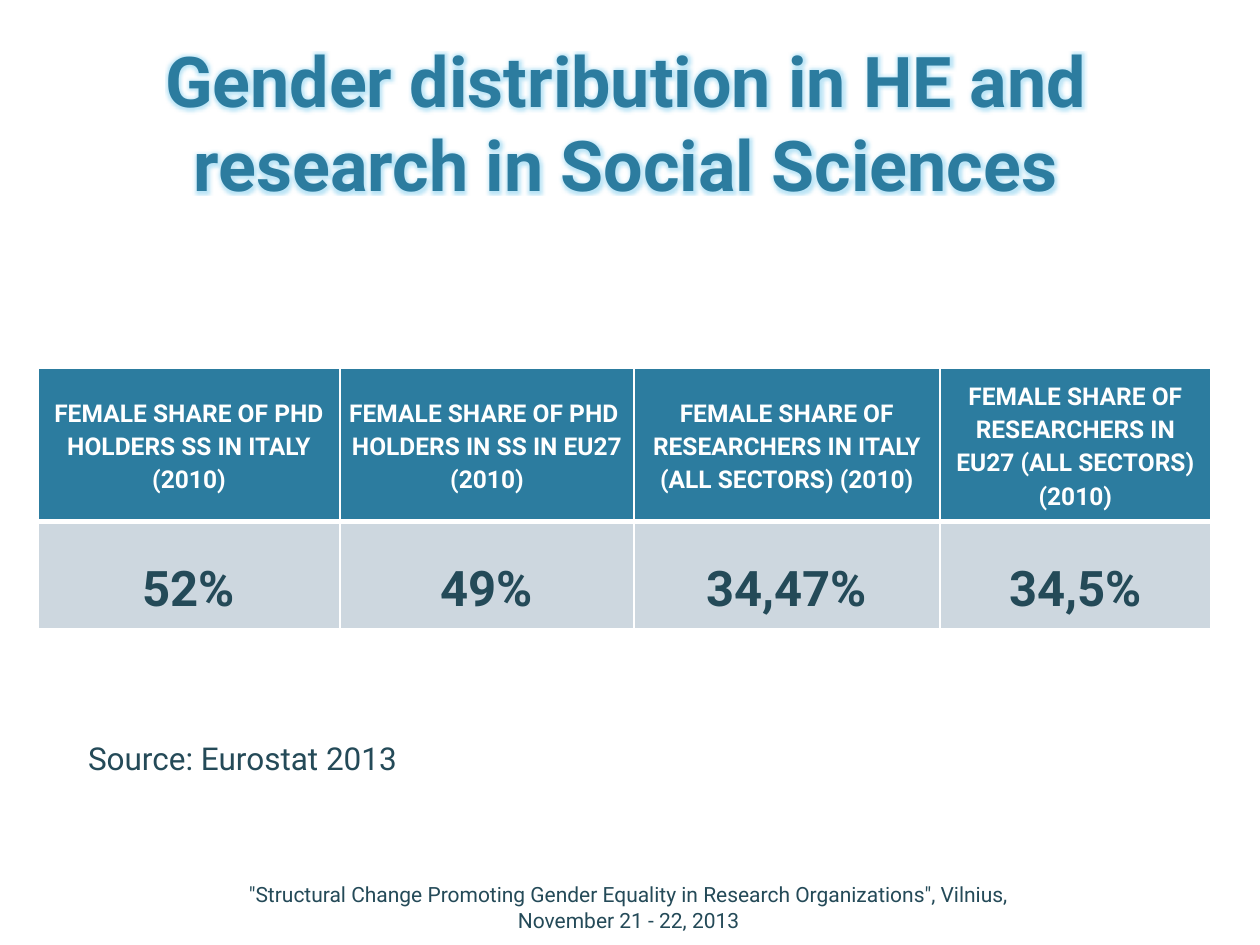
from lxml import etree
from pptx import Presentation
from pptx.dml.color import RGBColor
from pptx.enum.text import MSO_ANCHOR as Anchor, MSO_AUTO_SIZE as AutoSize, PP_ALIGN as Align
from pptx.oxml import parse_xml
from pptx.oxml.ns import qn
from pptx.util import Inches, Pt

TEAL, DARK, PALE, WHITE, GLOW = "2C7C9F", "244A58", "CDD7DF", "FFFFFF", "8FD3F0"
DRAWING = "http://schemas.openxmlformats.org/drawingml/2006/main"
TITLE = "Gender distribution in HE and research in Social Sciences"
SOURCE = "Source: Eurostat 2013"
FOOTER = ('"Structural Change Promoting Gender Equality in Research Organizations", '
          "Vilnius, November 21 - 22, 2013")
COLUMNS = [
    (2.4, "FEMALE SHARE OF PHD HOLDERS SS IN ITALY (2010)", "52%"),
    (2.33, "FEMALE SHARE OF PHD  HOLDERS IN SS IN EU27\n(2010)", "49%"),
    (2.43, "FEMALE SHARE OF RESEARCHERS IN ITALY (ALL SECTORS) (2010)", "34,47%"),
    (2.15, "FEMALE SHARE OF RESEARCHERS IN EU27 (ALL SECTORS) (2010)", "34,5%"),
]
ROWS = [
    dict(height=1.22, fill=TEAL, borders=dict(L=1, R=1, T=1, B=3),
         text=dict(size=14, color=WHITE, spacing=1.15)),
    dict(height=0.85, fill=PALE, borders=dict(L=1, R=1, T=3, B=1),
         text=dict(size=28, color=DARK, spacing=1.5)),
]


def rgb(value):
    return RGBColor.from_string(value)


def write(frame, text, size, color=DARK, bold=False, align=Align.CENTER,
          anchor=Anchor.MIDDLE, spacing=None, wrap=True):
    frame.word_wrap = wrap
    frame.vertical_anchor = anchor
    for index, line in enumerate(text.split("\n")):
        para = frame.add_paragraph() if index else frame.paragraphs[0]
        para.alignment = align
        if spacing:
            para.line_spacing = spacing
        span = para.add_run()
        span.text = line
        span.font.name = "Roboto"
        span.font.size = Pt(size)
        span.font.bold = bold
        span.font.color.rgb = rgb(color)


def add_glow(span, color, radius):
    effects = parse_xml(
        f'<a:effectLst xmlns:a="{DRAWING}"><a:glow rad="{Pt(radius)}">'
        f'<a:srgbClr val="{color}"><a:alpha val="60000"/></a:srgbClr></a:glow></a:effectLst>')
    span.font._element.find(qn("a:solidFill")).addnext(effects)


def set_borders(cell, color, widths):
    properties = cell._tc.get_or_add_tcPr()
    for side, width in widths.items():
        line = etree.SubElement(properties, qn(f"a:ln{side}"), w=str(Pt(width)))
        fill = etree.SubElement(line, qn("a:solidFill"))
        etree.SubElement(fill, qn("a:srgbClr"), val=color)


def place(shape, left, top, width, height):
    shape.left, shape.top, shape.width, shape.height = map(Inches, (left, top, width, height))


def add_table(page):
    width = sum(column[0] for column in COLUMNS)
    height = sum(row["height"] for row in ROWS)
    table = page.shapes.add_table(len(ROWS), len(COLUMNS), Inches(0.3), Inches(2.92),
                                  Inches(width), Inches(height)).table
    for across, (column_width, *texts) in enumerate(COLUMNS):
        table.columns[across].width = Inches(column_width)
        for down, (row, text) in enumerate(zip(ROWS, texts)):
            table.rows[down].height = Inches(row["height"])
            cell = table.cell(down, across)
            cell.margin_left = cell.margin_right = Inches(0.07)
            cell.margin_top = cell.margin_bottom = 0
            cell.vertical_anchor = Anchor.MIDDLE
            set_borders(cell, WHITE, row["borders"])
            cell.fill.solid()
            cell.fill.fore_color.rgb = rgb(row["fill"])
            write(cell.text_frame, text, bold=True, **row["text"])


def main():
    deck = Presentation()
    deck.slide_width, deck.slide_height = Inches(10), Inches(7.5)
    page = deck.slides.add_slide(deck.slide_layouts[5])
    title = page.shapes.title
    place(title, 0.19, 0.17, 9.55, 1.51)
    title.text_frame.auto_size = AutoSize.NONE
    write(title.text_frame, TITLE, size=40, color=TEAL, bold=True, anchor=Anchor.BOTTOM)
    add_glow(title.text_frame.paragraphs[0].runs[0], GLOW, 4)
    add_table(page)
    footer = page.shapes.add_textbox(*map(Inches, (1.75, 7, 6.48, 0.4)))
    write(footer.text_frame, FOOTER, size=12)
    source = page.shapes.add_textbox(*map(Inches, (0.6, 5.82, 2.91, 0.4)))
    source.text_frame.auto_size = AutoSize.SHAPE_TO_FIT_TEXT
    write(source.text_frame, SOURCE, size=18, align=Align.LEFT, anchor=Anchor.TOP, wrap=False)
    deck.save("out.pptx")


if __name__ == "__main__":
    main()
